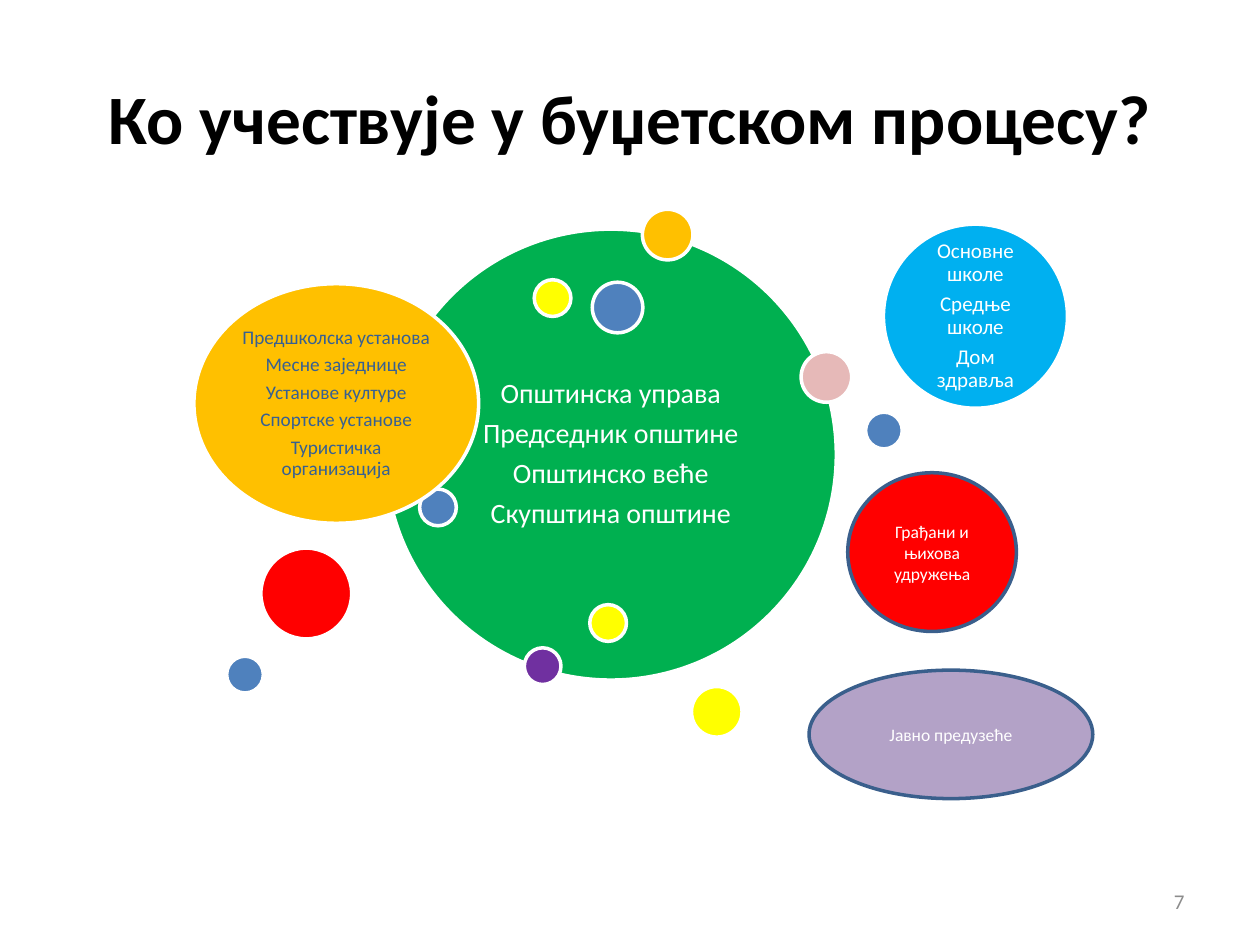
from pptx import Presentation
from pptx.dml.color import RGBColor
from pptx.enum.shapes import MSO_SHAPE as Shape
from pptx.enum.text import MSO_ANCHOR as Anchor, PP_ALIGN as Align
from pptx.util import Cm, Pt

FONT = "Calibri"
BLACK = RGBColor(0x00, 0x00, 0x00)
WHITE = RGBColor(0xFF, 0xFF, 0xFF)
GRAY = RGBColor(0x8C, 0x8C, 0x8C)
GREEN = RGBColor(0x00, 0xB0, 0x50)
ORANGE = RGBColor(0xFF, 0xC0, 0x00)
PURPLE = RGBColor(0x70, 0x30, 0xA0)
BLUE = RGBColor(0x4F, 0x81, 0xBD)
YELLOW = RGBColor(0xFF, 0xFF, 0x00)
RED = RGBColor(0xFF, 0x00, 0x00)
CYAN = RGBColor(0x00, 0xB0, 0xF0)
PINK = RGBColor(0xE6, 0xB9, 0xB8)
LILAC = RGBColor(0xB3, 0xA2, 0xC7)
NAVY = RGBColor(0x37, 0x60, 0x92)
OUTLINE = RGBColor(0x3A, 0x5F, 0x8C)

SMALL, MEDIUM, LARGE = 0.74, 1.02, 1.83  # dot diameters in cm
DOTS = [
    (12.95, 4.22, MEDIUM, ORANGE),
    (10.57, 13.06, SMALL, PURPLE),
    (17.45, 8.31, SMALL, BLUE),
    (13.94, 13.84, MEDIUM, YELLOW),
    (10.77, 5.64, SMALL, YELLOW),
    (8.46, 9.86, SMALL, BLUE),
    (11.94, 5.69, MEDIUM, BLUE),
    (5.26, 11.05, LARGE, RED),
    (16.15, 7.09, MEDIUM, PINK),
    (4.57, 13.23, SMALL, BLUE),
    (11.89, 12.19, SMALL, YELLOW),
]

MUNICIPALITY = ["Општинска управа", "Председник општине",
                "Општинско веће", "Скупштина општине"]
INSTITUTIONS = ["Предшколска установа", "Месне заједнице", "Установе културе",
                "Спортске установе", "Туристичка организација"]
SCHOOLS_AND_HEALTH = ["Основне школе", "Средње школе", "Дом здравља"]


def write(frame, paragraphs, size, color, bold=False, align=Align.CENTER,
          spacing=None, after=0, inset=None):
    """Fill a text frame; inset (cm) replaces the default margins."""
    frame.word_wrap = True
    frame.vertical_anchor = Anchor.MIDDLE
    if inset is not None:
        frame.margin_left = frame.margin_right = Cm(inset)
        frame.margin_top = frame.margin_bottom = Cm(inset)
    for index, text in enumerate(paragraphs):
        paragraph = frame.add_paragraph() if index else frame.paragraphs[0]
        paragraph.alignment = align
        paragraph.line_spacing = spacing
        paragraph.space_after = Pt(after)
        run = paragraph.add_run()
        run.text = text
        run.font.name = FONT
        run.font.size = Pt(size)
        run.font.bold = bold
        run.font.color.rgb = color


def add_label(slide, box, text, **text_format):
    label = slide.shapes.add_textbox(*map(Cm, box))
    write(label.text_frame, [text], **text_format)


def add_ellipse(slide, box, fill, line=WHITE):
    ellipse = slide.shapes.add_shape(Shape.OVAL, *map(Cm, box))
    ellipse.shadow.inherit = False
    ellipse.fill.solid()
    ellipse.fill.fore_color.rgb = fill
    ellipse.line.color.rgb = line
    ellipse.line.width = Pt(2)
    return ellipse


def add_participants(slide, box, fill, names, size, color=WHITE, inset=0.13):
    """Ellipse holding a spaced list of participants."""
    ellipse = add_ellipse(slide, box, fill)
    write(ellipse.text_frame, names, size, color, spacing=0.9,
          after=round(size * 0.35, 1), inset=inset)


def add_outside_group(slide, box, fill, name):
    ellipse = add_ellipse(slide, box, fill, OUTLINE)
    write(ellipse.text_frame, [name], 10, WHITE)


def main():
    deck = Presentation()
    deck.slide_width, deck.slide_height = Cm(25.4), Cm(19.05)
    slide = deck.slides.add_slide(deck.slide_layouts[6])

    add_label(slide, (1.27, 0.76, 22.86, 3.18), "Ко учествује у буџетском процесу?",
              size=39.6, color=BLACK, bold=True)
    add_label(slide, (18.21, 17.65, 5.92, 1.02), "7",
              size=12, color=GRAY, align=Align.RIGHT)

    add_participants(slide, (7.77, 4.62, 9.09, 9.09), GREEN, MUNICIPALITY, 16,
                     inset=0.18)
    for left, top, diameter, color in DOTS:
        add_ellipse(slide, (left, top, diameter, diameter), color)
    add_participants(slide, (3.91, 5.72, 5.74, 4.83), ORANGE, INSTITUTIONS, 11, NAVY)
    add_participants(slide, (17.81, 4.52, 3.71, 3.71), CYAN, SCHOOLS_AND_HEALTH, 12)

    add_outside_group(slide, (17.09, 9.53, 3.4, 3.2), RED, "Грађани и њихова удружења")
    add_outside_group(slide, (16.31, 13.51, 5.72, 2.59), LILAC, "Јавно предузеће")

    deck.save("out.pptx")


if __name__ == "__main__":
    main()
